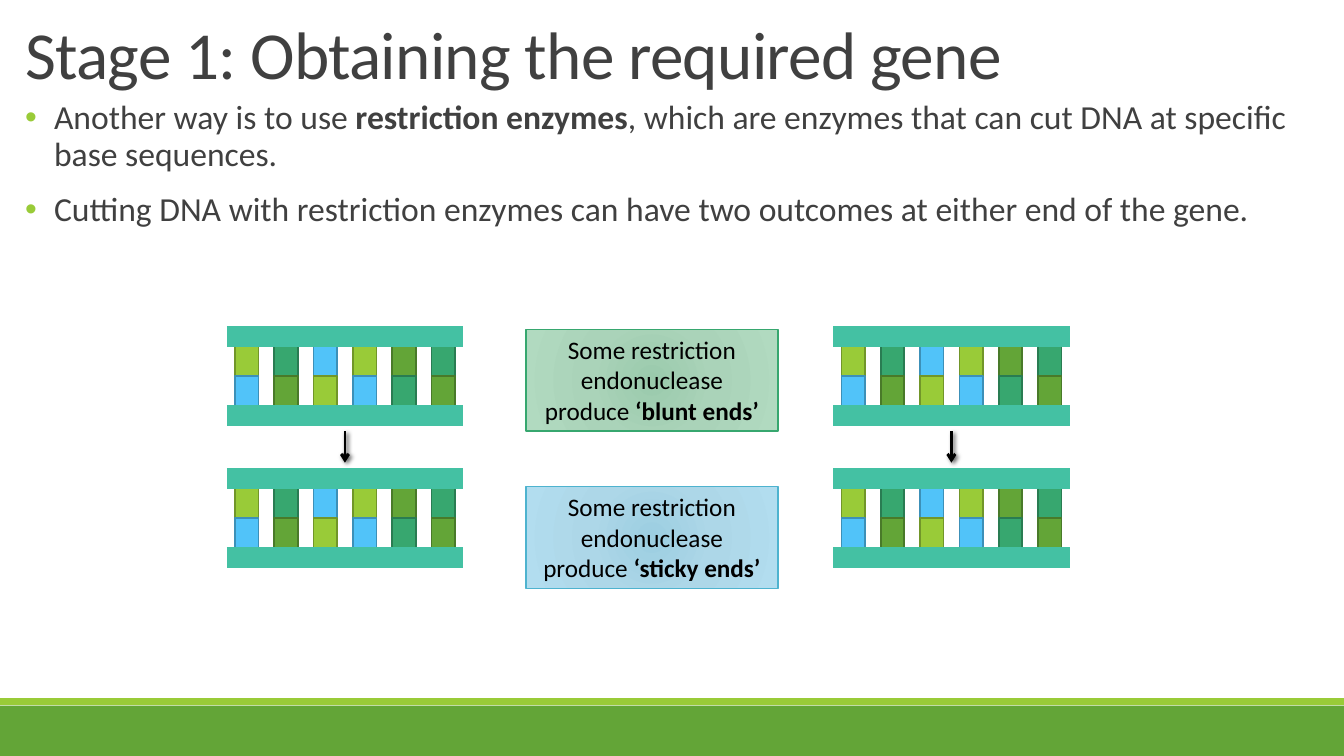
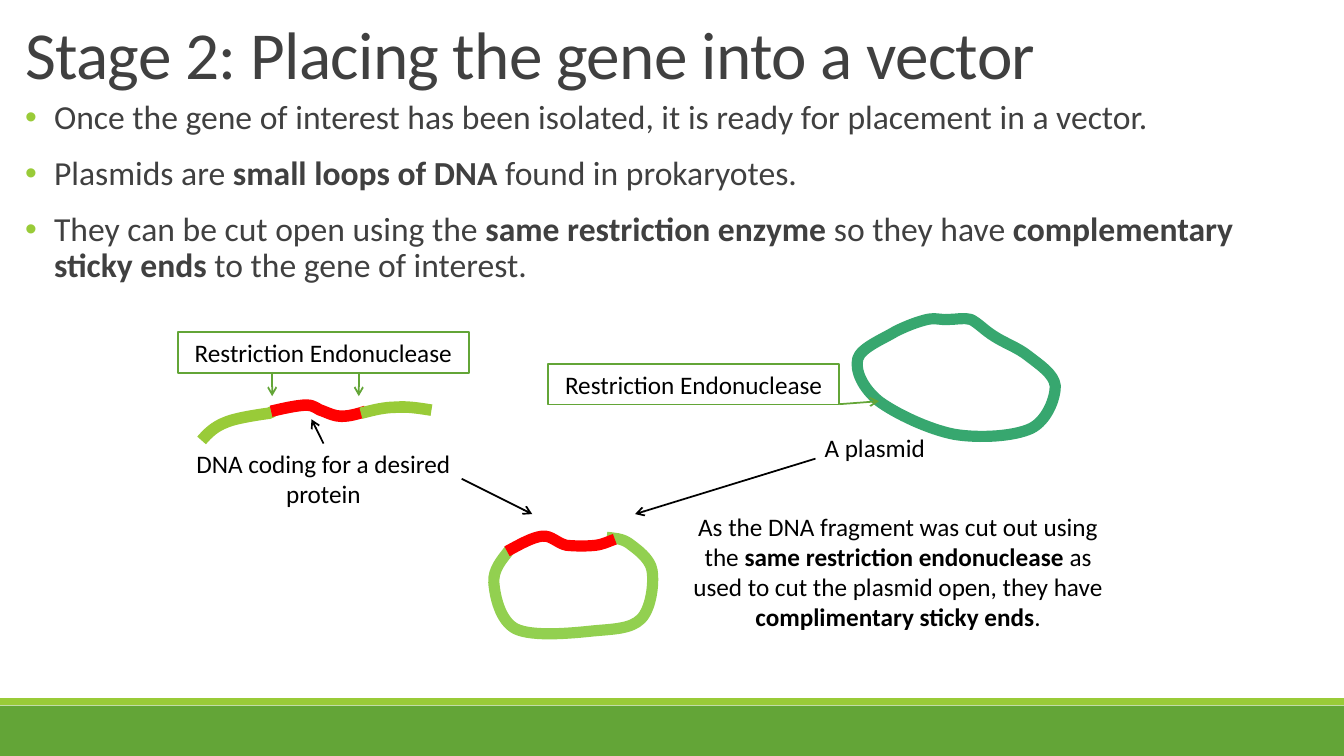
import pptx
import pptx.dml.color
import pptx.enum.shapes
import pptx.enum.text
import pptx.oxml
import pptx.oxml.ns
import pptx.util

Pt = pptx.util.Pt
colour = pptx.dml.color.RGBColor.from_string
qn = pptx.oxml.ns.qn
RECTANGLE = pptx.enum.shapes.MSO_SHAPE.RECTANGLE
STRAIGHT = pptx.enum.shapes.MSO_CONNECTOR.STRAIGHT
ALIGN = pptx.enum.text.PP_ALIGN
ANCHOR = pptx.enum.text.MSO_ANCHOR
NAMESPACE = pptx.oxml.ns.nsdecls("a")

FONT = "Calibri"
INK, BLACK, WHITE, RED = "404040", "000000", "FFFFFF", "FF0000"
LIME, LEAF, TEAL, SKY = "99CB38", "63A537", "37A76F", "51C3F9"
RAIL, LOOP = "44C1A3", "92D050"


def write_spans(para, text, size, ink):
    """Add runs to the paragraph; parts between asterisks are bold."""
    for index, part in enumerate(text.split("*")):
        if part:
            span = para.add_run()
            span.text = part
            span.font.name = FONT
            span.font.size = Pt(size)
            span.font.bold = index % 2 == 1
            span.font.color.rgb = colour(ink)


def paint(shape, fill=None, line=None, width=1.25):
    """Set fill and line, where None means none, and drop the shadow."""
    shape.shadow.inherit = False
    if fill:
        shape.fill.solid()
        shape.fill.fore_color.rgb = colour(fill)
    else:
        shape.fill.background()
    if line:
        shape.line.color.rgb = colour(line)
        shape.line.width = Pt(width)
    else:
        shape.line.fill.background()


deck = pptx.Presentation()
deck.slide_width, deck.slide_height = Pt(960), Pt(540)

# Shared layout: placeholder places
layout = deck.slide_layouts[1]
places = [(10.8, 15.1, 933.8, 54), (10.8, 68.4, 933.8, 420.5)]
for holder, place in zip(layout.placeholders, places):
    holder.left, holder.top, holder.width, holder.height = map(Pt, place)

# Titles and lists
contents = [
    ("Stage 1: Obtaining the required gene", [
        "Another way is to use *restriction enzymes*, which are enzymes that can cut DNA "
        "at specific base sequences.",
        "Cutting DNA with restriction enzymes can have two outcomes at either end of the gene.",
    ]),
    ("Stage 2: Placing the gene into a vector", [
        "Once the gene of interest has been isolated, it is ready for placement in a vector.",
        "Plasmids are *small loops of DNA* found in prokaryotes.",
        "They can be cut open using the *same restriction enzyme* so they have "
        "*complementary sticky ends* to the gene of interest.",
    ]),
]
pages = []
for title, bullets in contents:
    page = deck.slides.add_slide(layout)
    pages.append(page)
    frame = page.shapes.title.text_frame
    frame.auto_size = pptx.enum.text.MSO_AUTO_SIZE.NONE
    frame.vertical_anchor = ANCHOR.MIDDLE
    para = frame.paragraphs[0]
    para.alignment = ALIGN.LEFT
    para.line_spacing = 0.85
    write_spans(para, title, 48, INK)
    para.runs[0]._r.get_or_add_rPr().set("spc", "-50")

    frame = page.placeholders[1].text_frame
    frame.auto_size = pptx.enum.text.MSO_AUTO_SIZE.NONE
    for index, bullet in enumerate(bullets):
        para = frame.add_paragraph() if index else frame.paragraphs[0]
        para.line_spacing = 0.9
        para.space_before, para.space_after = Pt(12), Pt(2)
        write_spans(para, bullet, 24, INK)
        properties = para._p.get_or_add_pPr()
        properties.set("marL", str(Pt(20.6)))
        properties.set("indent", str(-Pt(20.6)))
        for xml in (f'<a:buClr {NAMESPACE}><a:srgbClr val="{LIME}"/></a:buClr>',
                    f'<a:buChar {NAMESPACE} char="•"/>'):
            properties.append(pptx.oxml.parse_xml(xml))
gene_page, vector_page = pages

# Bottom bands, moved from the first page into the layout
for index, (top, height, fill) in enumerate([(504, 36, LEAF), (498.6, 5.1, LIME)]):
    band = gene_page.shapes.add_shape(RECTANGLE, 0, Pt(top), Pt(960), Pt(height))
    paint(band, fill)
    band.element.nvSpPr.cNvPr.set("id", str(20 + index))
    layout.shapes.element.insert(2 + index, band.element)

# Lines: page, start x, start y, end x, end y, colour, width, arrow, shadow
lines = []

# DNA ladders: base pairs and backbone rails, intact above and cut below
partner = {LIME: SKY, SKY: LIME, TEAL: LEAF, LEAF: TEAL}
edge = {LIME: "719629", SKY: "3C90B8", TEAL: "297C52", LEAF: "497A29"}
sequence = [LIME, TEAL, SKY, LIME, LEAF, TEAL]
INTACT_TOP, CUT_TOP = 240.5, 342
for left, cuts in [(162, (246.2, 246.2)), (595.2, (623.5, 735.8))]:
    right = left + 169
    for rail_top in (INTACT_TOP, CUT_TOP):
        for column, base in enumerate(sequence):
            for row, fill in enumerate((base, partner[base])):
                block = gene_page.shapes.add_shape(
                    RECTANGLE, Pt(left + 5.8 + 28.1 * column),
                    Pt(rail_top + 5.8 + 22.3 * row), Pt(16.8), Pt(22.3))
                paint(block, fill, edge[fill])
        for rail, cut in zip((rail_top, rail_top + 56.3), cuts):
            stops = [left, right] if rail_top == INTACT_TOP else [left, cut, right]
            for start, end in zip(stops, stops[1:]):
                lines.append((gene_page, start, rail, end, rail, RAIL, 15, False, False))
    middle = left + 84.4
    lines.append((gene_page, middle, 308.2, middle, 330.5, BLACK, 2, True, True))

# DNA strands and loops: start point, then three points for each cubic curve
strands = [
    (LIME, 8.25, None, [
        (144, 314.6), (148.3, 309.6), (153.4, 304.6), (161.3, 301.7),
        (169.2, 298.1), (192.2, 295.2), (192.2, 295.2),
        (193.2, 294.7), (194.2, 294.2), (195.1, 293.8)]),
    (RED, 8.25, None, [
        (193.7, 293.8), (203, 291.6), (213.1, 289.4), (218.9, 289.4),
        (225.4, 289.4), (226.8, 293), (231.1, 293.8),
        (234.7, 295.2), (239, 297.4), (244.1, 297.4),
        (249.1, 297.4), (254.9, 295.9), (261.4, 293.8)]),
    (LIME, 8.25, None, [
        (257.8, 295.2), (266.4, 293), (274.3, 290.9), (283, 290.9),
        (290.9, 290.2), (299.5, 291.6), (308.2, 293)]),
    (TEAL, 8, WHITE, [
        (662.4, 228.2), (655.9, 229.7), (648, 232.6), (639.4, 236.9),
        (631.4, 241.9), (614.9, 248.4), (612.7, 256.3),
        (610.6, 265), (616.3, 277.2), (627.8, 286.6),
        (639.4, 295.2), (663.1, 306.7), (681.8, 310.3),
        (699.8, 313.2), (724.3, 311.8), (736.6, 306),
        (748.1, 300.2), (753.8, 284.4), (753.8, 275.8),
        (753.1, 267.1), (741.6, 259.9), (734.4, 254.2),
        (727.2, 248.4), (717.1, 244.8), (710.6, 240.5),
        (703.4, 236.2), (698.4, 230.4), (693.4, 228.2),
        (688.3, 226.8), (683.3, 228.2), (678.2, 228.2),
        (673.2, 229), (668.9, 226.8), (662.4, 228.2)]),
    (LOOP, 8, None, [
        (364.3, 392.4), (358.6, 399.6), (352.1, 406.8), (352.8, 416.2),
        (353.5, 425.5), (357.1, 443.5), (368.6, 449.3),
        (380.9, 455), (409, 452.2), (423.4, 450.7),
        (438.5, 449.3), (450.7, 449.3), (457.9, 442.1),
        (465.1, 434.9), (467.3, 416.9), (465.8, 407.5),
        (464.4, 398.9), (455, 392.4), (449.3, 388.1),
        (444.2, 384.5), (438.5, 384.5), (433.4, 383.8)]),
    (RED, 8, None, [
        (362.2, 393.8), (371.5, 388.8), (380.2, 383.8), (387.4, 383),
        (393.8, 382.3), (398.2, 388.1), (404.6, 389.5),
        (411.1, 390.2), (419.8, 390.2), (425.5, 389.5),
        (431.3, 388.8), (434.9, 386.6), (439.2, 385.2)]),
]
for stroke, width, fill, points in strands:
    start, *rest = [(Pt(x), Pt(y)) for x, y in points]
    builder = vector_page.shapes.build_freeform(*start)
    builder.add_line_segments(rest, close=start == rest[-1])
    strand = builder.convert_to_shape()
    paint(strand, fill, stroke, width)
    # Every three straight segments become the points of one cubic curve
    segments = list(strand.element.iter(qn("a:lnTo")))
    for first in range(0, len(segments), 3):
        curve = pptx.oxml.parse_xml(f"<a:cubicBezTo {NAMESPACE}/>")
        segments[first].addprevious(curve)
        for segment in segments[first:first + 3]:
            curve.append(segment[0])
            segment.getparent().remove(segment)

# Labels: page, place, text, fill (a list holds gradient colours), line, line width
green_glow = ["9ACAAC", "AAD3B9", "B1DAC0"]
blue_glow = ["9CCEE1", "ADD7E8", "B2DDEF"]
labels = [
    (gene_page, (375.7, 235.3, 180, 72.7),
     "Some restriction endonuclease produce *‘blunt ends’*", green_glow, TEAL, 1),
    (gene_page, (375.7, 347.7, 180, 72.7),
     "Some restriction endonuclease produce *‘sticky ends’*", blue_glow, "4EB3CF", 1),
    (vector_page, (127, 237.4, 208, 29), "Restriction Endonuclease", WHITE, LEAF, 1.25),
    (vector_page, (391.5, 260, 208, 29), "Restriction Endonuclease", WHITE, LEAF, 1.25),
    (vector_page, (132.7, 316.8, 196.6, 51), "DNA coding for a desired protein", None, None, 0),
    (vector_page, (526.5, 305.3, 196.6, 29), "A plasmid", None, None, 0),
    (vector_page, (486.7, 361.4, 309.6, 94.3),
     "As the DNA fragment was cut out using the *same restriction endonuclease* as used to "
     "cut the plasmid open, they have *complimentary sticky ends*.", None, None, 0),
]
for page, place, text, fill, line, width in labels:
    place = [Pt(length) for length in place]
    if line is None:
        box = page.shapes.add_textbox(*place)
    else:
        box = page.shapes.add_shape(RECTANGLE, *place)
        paint(box, fill[0] if isinstance(fill, list) else fill, line, width)
    if isinstance(fill, list):
        stops = "".join(f'<a:gs pos="{position}"><a:srgbClr val="{shade}"/></a:gs>'
                        for position, shade in zip((0, 45000, 100000), fill))
        solid = box.element.spPr.find(qn("a:solidFill"))
        box.element.spPr.replace(solid, pptx.oxml.parse_xml(
            f'<a:gradFill {NAMESPACE} rotWithShape="1"><a:gsLst>{stops}</a:gsLst>'
            '<a:path path="circle"><a:fillToRect l="100000" t="100000" r="100000" b="100000"/>'
            '</a:path></a:gradFill>'))
    frame = box.text_frame
    frame.word_wrap = True
    frame.vertical_anchor = ANCHOR.TOP
    frame.paragraphs[0].alignment = ALIGN.CENTER
    write_spans(frame.paragraphs[0], text, 18, BLACK)

# Arrows of the vector page
for start_x, start_y, end_x, end_y, stroke in [
        (231.1, 316.8, 222.5, 299.5, BLACK),
        (194.4, 265.7, 194.4, 283, LEAF),
        (256.3, 265.7, 256.3, 283, LEAF),
        (599.8, 288.7, 627.8, 286.6, LEAF),
        (329.8, 342, 380.2, 367.2, BLACK),
        (582.5, 327.6, 453.6, 367.2, BLACK)]:
    lines.append((vector_page, start_x, start_y, end_x, end_y, stroke, 1.25, True, False))

shadow_xml = (f'<a:outerShdw blurRad="{Pt(3)}" dist="{Pt(2)}" dir="2700000">'
              f'<a:srgbClr val="{BLACK}"><a:alpha val="60000"/></a:srgbClr></a:outerShdw>')
for page, start_x, start_y, end_x, end_y, stroke, width, arrow, shadow in lines:
    link = page.shapes.add_connector(STRAIGHT, Pt(start_x), Pt(start_y), Pt(end_x), Pt(end_y))
    link.line.color.rgb = colour(stroke)
    link.line.width = Pt(width)
    if arrow:
        link.element.spPr.find(qn("a:ln")).append(
            pptx.oxml.parse_xml(f'<a:tailEnd {NAMESPACE} type="arrow"/>'))
    link.element.spPr.append(pptx.oxml.parse_xml(
        f'<a:effectLst {NAMESPACE}>{shadow_xml if shadow else ""}</a:effectLst>'))

deck.save("out.pptx")
